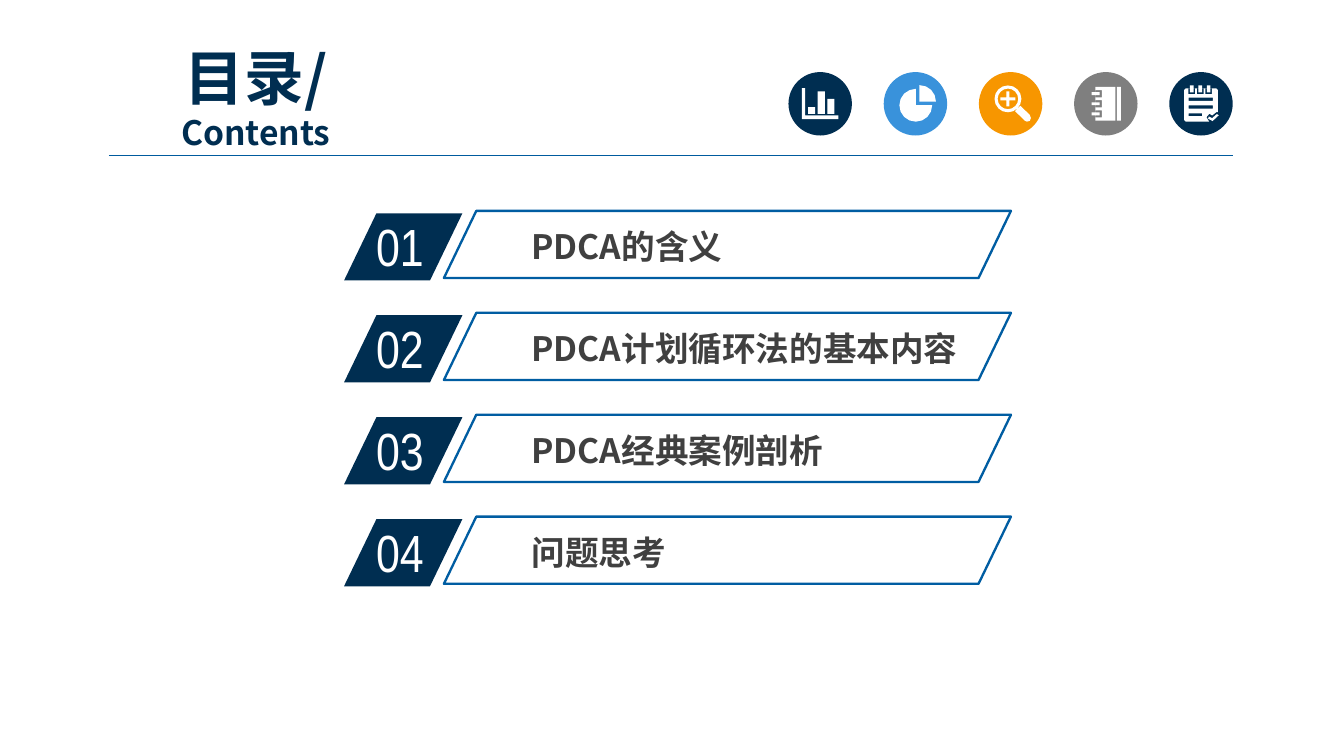
from math import cos, radians, sin

from lxml.etree import SubElement
from pptx import Presentation
from pptx.dml.color import RGBColor
from pptx.enum.shapes import MSO_CONNECTOR, MSO_SHAPE
from pptx.enum.text import MSO_ANCHOR, MSO_AUTO_SIZE, PP_ALIGN
from pptx.oxml.ns import qn
from pptx.util import Pt

COLORS = {
    "navy": "002E51", "sky": "3992DB", "orange": "F79600", "gray": "7F7F7F",
    "white": "FFFFFF", "text": "404040", "rule": "005B9E", "outline": "005DA2",
}
CJK_FONT, NUMBER_FONT = "Noto Sans CJK SC", "Arial Narrow"
TITLE = [("目录/", 32), ("Contents", 18)]
CHAPTERS = ["PDCA的含义", "PDCA计划循环法的基本内容", "PDCA经典案例剖析", "问题思考"]
ROW_PITCH, ROW_HEIGHT, SLANT = 54.6, 36, 0.482
BADGE_LEFT, BADGE_TOP, BADGE_WIDTH = 184.3, 114.3, 63.4
FRAME_LEFT, FRAME_TOP, FRAME_WIDTH = 237.8, 113, 303.8
ICON_LEFT, ICON_TOP, ICON_SIZE, ICON_PITCH = 422.4, 38.6, 34, 51


def arc(center_x, center_y, radius, start=0, end=360):
    """Return points along a clockwise arc."""
    steps = max(1, round((end - start) / 22.5))
    angles = [radians(start + (end - start) * i / steps) for i in range(steps + 1)]
    return [(center_x + radius * cos(a), center_y + radius * sin(a)) for a in angles]


def sector(center_x, center_y, radius, start, end):
    """Return a pie slice outline."""
    return [(center_x, center_y)] + arc(center_x, center_y, radius, start, end)


def bar(left, top, width, height):
    """Return a rectangle outline."""
    right, bottom = left + width, top + height
    return [(left, top), (right, top), (right, bottom), (left, bottom)]


def cross(x, y, arm, half):
    """Return a plus sign outline."""
    return [(x - half, y - arm), (x + half, y - arm), (x + half, y - half),
            (x + arm, y - half), (x + arm, y + half), (x + half, y + half),
            (x + half, y + arm), (x - half, y + arm), (x - half, y + half),
            (x - arm, y + half), (x - arm, y - half), (x - half, y - half)]


BAR_CHART = [
    [(7.2, 8.6), (9, 8.6), (9, 23.2), (26.8, 23.2), (26.8, 25.2), (7.2, 25.2)],
    bar(10.5, 18.8, 3.8, 3.7), bar(15.6, 10.4, 3.9, 12.1), bar(20.9, 14.4, 3.8, 8.1),
]
PIE_CHART = [sector(19.2, 15.8, 8.8, 270, 360), sector(17.2, 17.8, 8.8, 0, 270)]
MAGNIFIER = [
    arc(15.6, 14.4, 7.2), arc(15.6, 14.4, 5.5), cross(15.6, 14.4, 4, 0.8),
    [(19.4, 21), (22.3, 18.1), (27.3, 23), (27.9, 24.7), (27.3, 26.2),
     (25.8, 26.6), (24.8, 26.2)],
]
NOTEBOOK = [bar(23, 8, 2.1, 18), bar(11.5, 8, 10.7, 18)]
for ring_y in (11.6, 17, 22.4):
    NOTEBOOK += [bar(11.5, ring_y - 1.9, 3.5, 3.8), bar(9.4, ring_y - 0.8, 4.3, 1.6)]
CHECKLIST = [
    [(8, 9.6), (8.8, 8.8), (25.2, 8.8), (26, 9.6), (26, 21.5), (25.2, 21.5),
     (23, 23.3), (21.5, 22.4), (19.9, 24.2), (21.4, 26.6), (8.8, 26.6), (8, 25.8)],
    bar(10.4, 13.8, 12.9, 1.7), bar(10.4, 17.9, 12.9, 1.7), bar(10.4, 22.2, 7.2, 1.5),
    [(21.2, 23.8), (23, 24.7), (25.5, 22.5), (26.5, 23.2), (23.2, 26.3), (20.8, 25)],
]
for ring_x in (12.1, 16.6, 21.1):
    CHECKLIST += [bar(ring_x - 1.8, 8.8, 3.6, 3.1), bar(ring_x - 1, 7.2, 2, 3.7)]
ICONS = [("navy", BAR_CHART), ("sky", PIE_CHART), ("orange", MAGNIFIER),
         ("gray", NOTEBOOK), ("navy", CHECKLIST)]


def color(name):
    """Look up a palette color."""
    return RGBColor.from_string(COLORS[name])


def style(shape, fill=None, line=None):
    """Set fill and outline and remove the shadow."""
    shape.shadow.inherit = False
    if fill:
        shape.fill.solid()
        shape.fill.fore_color.rgb = color(fill)
    else:
        shape.fill.background()
    if line:
        shape.line.color.rgb = color(line)
        shape.line.width = Pt(1.25)
    else:
        shape.line.fill.background()


def add_run(paragraph, text, size, font, tint, bold=False):
    """Add a formatted run with matching Latin and East Asian fonts."""
    run = paragraph.add_run()
    run.text = text
    run.font.size, run.font.name, run.font.bold = Pt(size), font, bold
    run.font.color.rgb = color(tint)
    SubElement(run.font._element, qn("a:ea")).set("typeface", font)


def add_box(shapes, left, top, width, height):
    """Add a wrapping text box."""
    box = shapes.add_textbox(Pt(left), Pt(top), Pt(width), Pt(height))
    box.text_frame.word_wrap = True
    return box.text_frame


def add_parallelogram(shapes, left, top, width, **look):
    """Add a slanted row shape."""
    shape = shapes.add_shape(MSO_SHAPE.PARALLELOGRAM, Pt(left), Pt(top), Pt(width), Pt(ROW_HEIGHT))
    shape.adjustments[0] = SLANT
    style(shape, **look)


def add_header(slide):
    """Add the title and the rule below it."""
    frame = add_box(slide.shapes, 48.2, 33.8, 177.8, 38.9)
    frame.vertical_anchor = MSO_ANCHOR.MIDDLE
    paragraph = frame.paragraphs[0]
    paragraph.alignment = PP_ALIGN.CENTER
    paragraph.line_spacing = 0.96
    for i, (text, size) in enumerate(TITLE):
        if i:
            paragraph.add_line_break()
        add_run(paragraph, text, size, CJK_FONT, "navy", True)
    rule = slide.shapes.add_connector(MSO_CONNECTOR.STRAIGHT, Pt(58.3), Pt(83.3), Pt(660.4), Pt(83.3))
    rule.line.color.rgb = color("rule")
    rule.line.width = Pt(0.75)
    SubElement(rule._element.spPr, qn("a:effectLst"))


def add_chapter(slide, index, title):
    """Add one numbered chapter row."""
    offset = index * ROW_PITCH
    badge = slide.shapes.add_group_shape().shapes
    add_parallelogram(badge, BADGE_LEFT, BADGE_TOP + offset, BADGE_WIDTH, fill="navy")
    frame = add_box(badge, 194.4, 111.4 + offset, 60.5, 35.3)
    frame.auto_size = MSO_AUTO_SIZE.SHAPE_TO_FIT_TEXT
    add_run(frame.paragraphs[0], f"{index + 1:02}", 28, NUMBER_FONT, "white")

    label = slide.shapes.add_group_shape().shapes
    frame = add_box(label, 279.4, 118.2 + offset, 245.5, 27.4)
    frame.auto_size = MSO_AUTO_SIZE.SHAPE_TO_FIT_TEXT
    frame.margin_left = frame.margin_right = Pt(5.3)
    frame.margin_top = frame.margin_bottom = Pt(2.9)
    add_run(frame.paragraphs[0], title, 18, CJK_FONT, "text", True)
    add_parallelogram(label, FRAME_LEFT, FRAME_TOP + offset, FRAME_WIDTH, line="outline")


def add_icon(slide, index, fill, contours):
    """Add a disc with a white symbol."""
    left = ICON_LEFT + index * ICON_PITCH
    shapes = slide.shapes.add_group_shape().shapes
    disc = shapes.add_shape(MSO_SHAPE.OVAL, Pt(left), Pt(ICON_TOP), Pt(ICON_SIZE), Pt(ICON_SIZE))
    style(disc, fill=fill)
    placed = [[(Pt(left + x), Pt(ICON_TOP + y)) for x, y in contour] for contour in contours]
    builder = shapes.build_freeform(*placed[0][0])
    for i, contour in enumerate(placed):
        if i:
            builder.move_to(*contour[0])
        builder.add_line_segments(contour[1:], close=True)
    style(builder.convert_to_shape(), fill="white")


def main():
    """Build the contents slide."""
    presentation = Presentation()
    presentation.slide_width, presentation.slide_height = Pt(720), Pt(405)
    slide = presentation.slides.add_slide(presentation.slide_layouts[6])
    add_header(slide)
    for index, title in enumerate(CHAPTERS):
        add_chapter(slide, index, title)
    for index, (fill, contours) in enumerate(ICONS):
        add_icon(slide, index, fill, contours)
    presentation.save("out.pptx")


if __name__ == "__main__":
    main()
